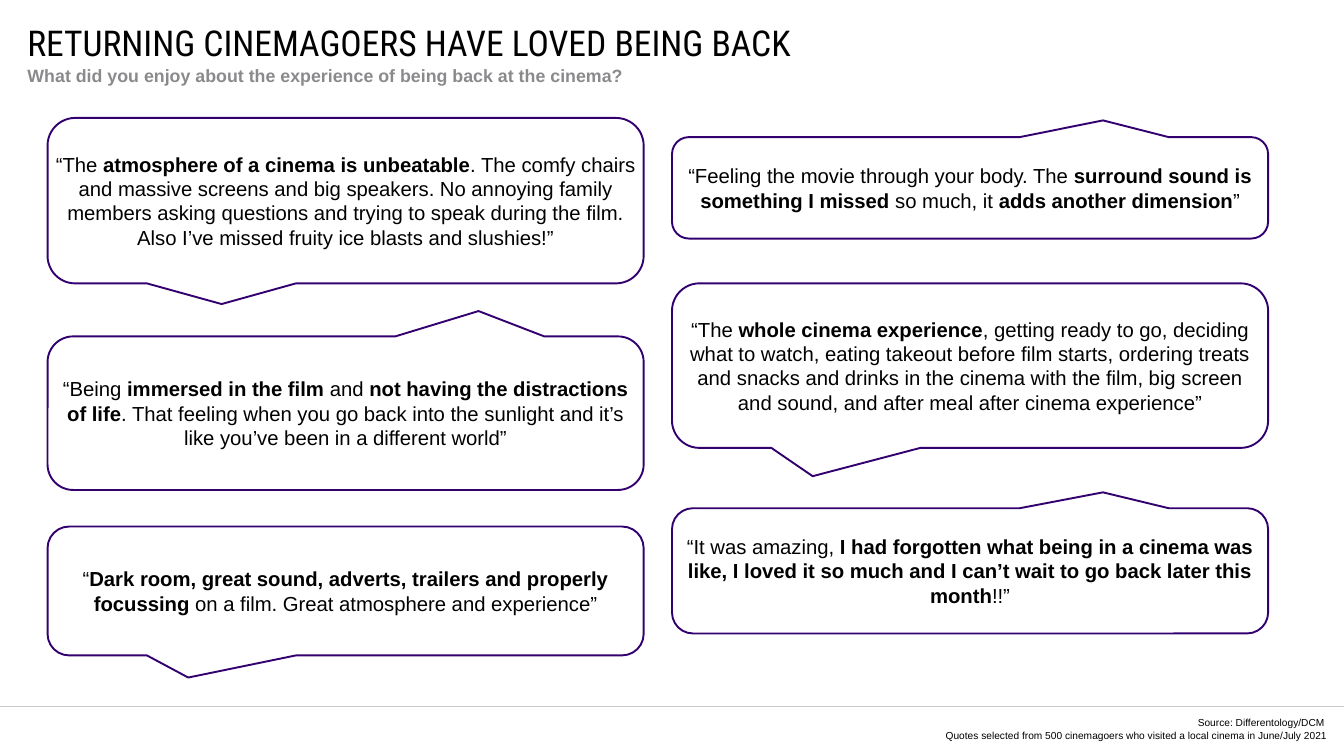
from pptx import Presentation
from pptx.dml.color import RGBColor
from pptx.enum.shapes import MSO_CONNECTOR, MSO_SHAPE
from pptx.enum.text import MSO_ANCHOR, PP_ALIGN
from pptx.oxml.ns import qn
from pptx.util import Inches, Pt
from lxml import etree

STRAIGHT = MSO_CONNECTOR.STRAIGHT
BUBBLE = MSO_SHAPE.ROUNDED_RECTANGULAR_CALLOUT
TOP, MIDDLE = MSO_ANCHOR.TOP, MSO_ANCHOR.MIDDLE
LEFT, CENTER, RIGHT = PP_ALIGN.LEFT, PP_ALIGN.CENTER, PP_ALIGN.RIGHT

WIDE, HIGH = 14.7, 8.27
LEFT_COL, RIGHT_COL, BOX_WIDTH = 0.52, 7.35, 6.52
ROUND = 0.167
LOW_TAIL = (-0.208, 0.625)
SIDE_TAIL = (-0.264, 0.672)
HIGH_TAIL = (0.223, -0.665)
SHORT_TAIL = (0.223, -0.627)

QUOTES = [
    (RIGHT_COL, 1.5, 1.11, HIGH_TAIL,
     "“Feeling the movie through your body. The **surround sound is something "
     "I missed** so much, it **adds another dimension**”"),
    (RIGHT_COL, 3.1, 1.8, SIDE_TAIL,
     "“The **whole cinema experience**, getting ready to go, deciding what to "
     "watch, eating takeout before film starts, ordering treats and snacks and "
     "drinks in the cinema with the film, big screen and sound, and after meal "
     "after cinema experience”"),
    (RIGHT_COL, 5.56, 1.37, SHORT_TAIL,
     "“It was amazing, **I had forgotten what being in a cinema was like, I "
     "loved it so much and I can’t wait to go back later this month**!!”"),
    (LEFT_COL, 1.29, 1.81, LOW_TAIL,
     "“The **atmosphere of a cinema is unbeatable**. The comfy chairs and "
     "massive screens and big speakers. No annoying family members asking "
     "questions and trying to speak during the film. Also I’ve missed fruity "
     "ice blasts and slushies!”"),
    (LEFT_COL, 3.68, 1.68, HIGH_TAIL,
     "“Being **immersed in the film **and **not having the distractions of "
     "life**. That feeling when you go back into the sunlight and it’s like "
     "you’ve been in a different world”"),
    (LEFT_COL, 5.76, 1.41, SIDE_TAIL,
     "“**Dark room, great sound, adverts, trailers and properly focussing **on "
     "a film. Great atmosphere and experience”"),
]


def color(code):
    return RGBColor.from_string(code)


class Board:
    font = "Arial"
    ink = "000000"
    edge = "33006F"

    def __init__(self, deck):
        self.slide = deck.slides.add_slide(deck.slide_layouts[6])

    def frame(self, shape, anchor, wrap=True):
        frame = shape.text_frame
        frame.word_wrap = wrap
        frame.vertical_anchor = anchor
        frame.margin_left = frame.margin_right = 0
        frame.margin_top = frame.margin_bottom = 0
        return frame

    def style(self, para, size, align, font=None, ink=None):
        para.alignment = align
        for run in para.runs:
            run.font.name = font or self.font
            run.font.size = Pt(size)
            run.font.color.rgb = color(ink or self.ink)

    def text(self, box, words, size, anchor=MIDDLE, align=LEFT, font=None,
             ink=None, wrap=True):
        shape = self.slide.shapes.add_textbox(*map(Inches, box))
        frame = self.frame(shape, anchor, wrap)
        frame.text = words
        for para in frame.paragraphs:
            self.style(para, size, align, font, ink)
        return frame

    def rule(self, top):
        line = self.slide.shapes.add_connector(
            STRAIGHT, 0, Inches(top), Inches(WIDE), Inches(top))
        line.line.color.rgb = color("CAC8C8")
        line.line.width = Pt(0.5)
        etree.SubElement(line._element.spPr, qn("a:effectLst"))

    def quote(self, left, top, height, tail, words):
        box = map(Inches, (left, top, BOX_WIDTH, height))
        shape = self.slide.shapes.add_shape(BUBBLE, *box)
        for index, value in enumerate((*tail, ROUND)):
            shape.adjustments[index] = value
        shape.shadow.inherit = False
        shape.fill.background()
        shape.line.color.rgb = color(self.edge)
        shape.line.width = Pt(1.5)
        para = self.frame(shape, MIDDLE).paragraphs[0]
        for index, part in enumerate(words.split("**")):
            run = para.add_run()
            run.text = part
            run.font.bold = index % 2 == 1
        self.style(para, 16, CENTER)


def main():
    deck = Presentation()
    deck.slide_width, deck.slide_height = Inches(WIDE), Inches(HIGH)
    board = Board(deck)
    board.rule(7.73)
    board.text((0.3, 0.3, 13.58, 0.32),
               "RETURNING CINEMAGOERS HAVE LOVED BEING BACK", 28,
               font="Roboto Condensed", wrap=False)
    board.text((8.65, 7.84, 5.87, 0.27),
               "Source: Differentology/DCM \nQuotes selected from 500 cinemagoers "
               "who visited a local cinema in June/July 2021", 8, align=RIGHT)
    lead = board.text((0.3, 0.73, 13.59, 0.48),
                      "What did you enjoy about the experience of being back at "
                      "the cinema?", 14, anchor=TOP, ink="8A8A8D").paragraphs[0]
    lead.line_spacing = Pt(15)
    lead.runs[0].font.bold = True
    for quote in QUOTES:
        board.quote(*quote)
    deck.save("out.pptx")


if __name__ == "__main__":
    main()
